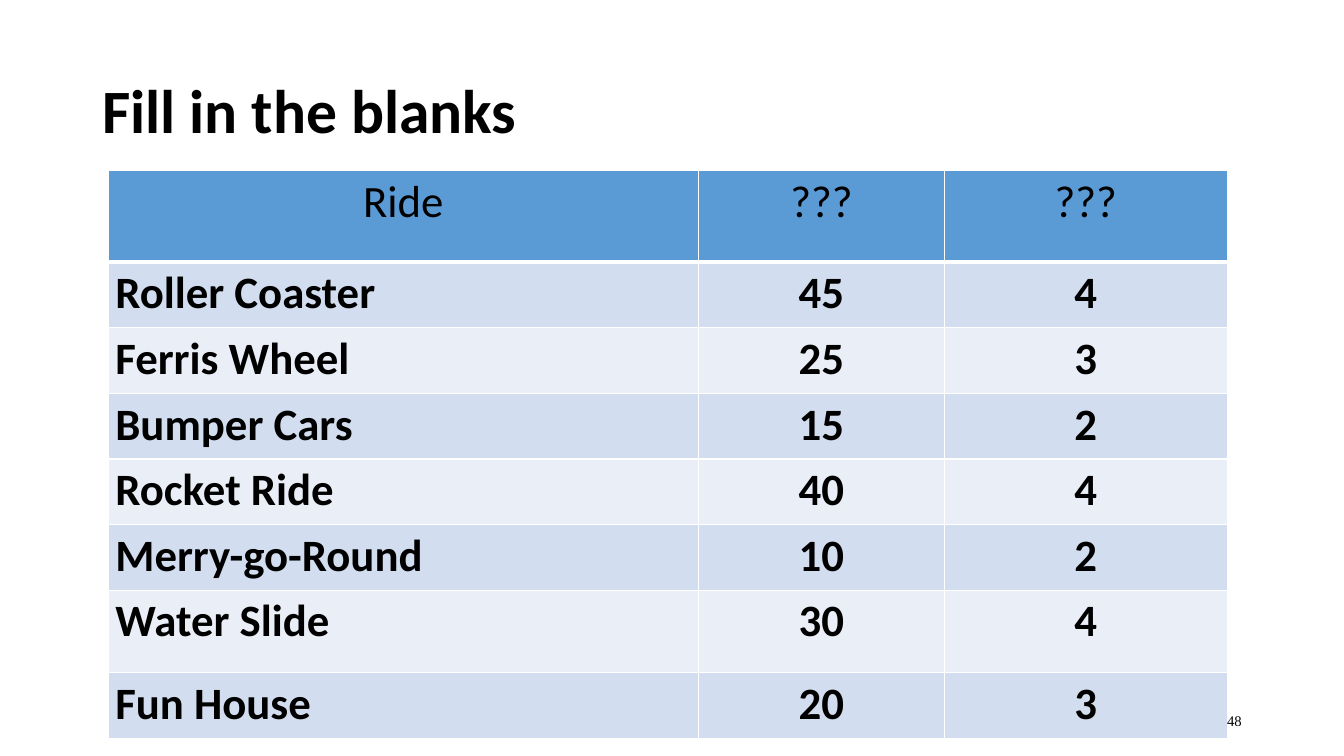
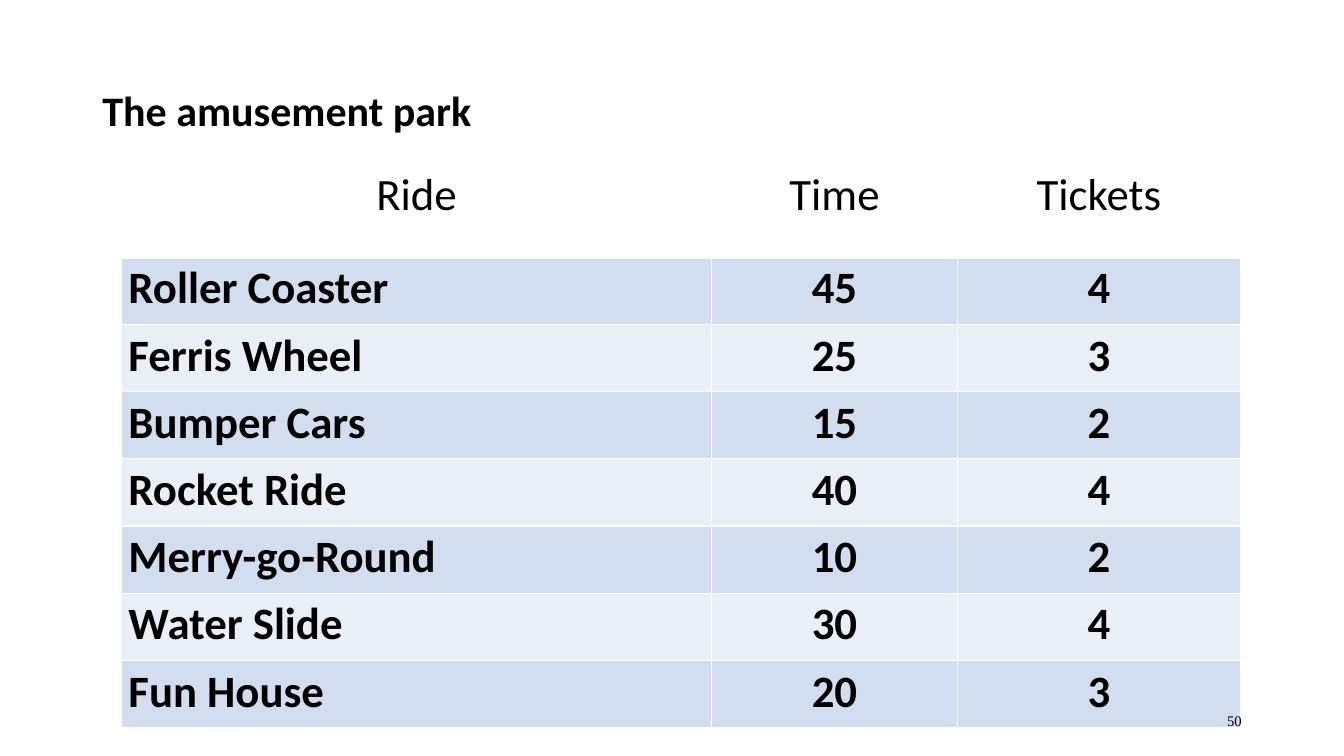
import pptx
import pptx.dml.color
import pptx.enum.text
import pptx.oxml
import pptx.oxml.ns
import pptx.util

Pt = pptx.util.Pt
RGBColor = pptx.dml.color.RGBColor
ALIGN = pptx.enum.text.PP_ALIGN
MIDDLE = pptx.enum.text.MSO_ANCHOR.MIDDLE

BLACK = RGBColor(0x00, 0x00, 0x00)
WHITE = RGBColor(0xFF, 0xFF, 0xFF)
HEADER_BLUE = RGBColor(0x5B, 0x9B, 0xD5)
BAND_COLORS = (RGBColor(0xD2, 0xDE, 0xEF), RGBColor(0xEA, 0xEF, 0xF7))

TITLE_BOX = (66, 28.8, 828, 104.4)
NUMBER_BOX = (678, 500.4, 216, 28.8)
COLUMN_WIDTHS = (421.5, 175.7, 202)

RIDES = (
    ("Roller Coaster", "45", "4"),
    ("Ferris Wheel", "25", "3"),
    ("Bumper Cars", "15", "2"),
    ("Rocket Ride", "40", "4"),
    ("Merry-go-Round", "10", "2"),
    ("Water Slide", "30", "4"),
    ("Fun House", "20", "3"),
)


def format_text(text_frame, size, font="Calibri", bold=False, align=ALIGN.LEFT):
    for paragraph in text_frame.paragraphs:
        paragraph.alignment = align
        for run in paragraph.runs:
            run.font.name = font
            run.font.size = Pt(size)
            run.font.bold = bold
            run.font.color.rgb = BLACK


def add_title(slide, box, text, size):
    title = slide.shapes.title
    title.left, title.top, title.width, title.height = map(Pt, box)
    text_frame = title.text_frame
    text_frame.text = text
    text_frame.auto_size = pptx.enum.text.MSO_AUTO_SIZE.NONE
    text_frame.vertical_anchor = MIDDLE
    text_frame.paragraphs[0].line_spacing = 0.9
    format_text(text_frame, size, bold=True)


def add_page_number(slide, box, number):
    text_frame = slide.shapes.add_textbox(*map(Pt, box)).text_frame
    text_frame.text = number
    text_frame.word_wrap = True
    text_frame.vertical_anchor = MIDDLE
    format_text(text_frame, 10.5, font="Times New Roman", align=ALIGN.RIGHT)


def set_borders(cell, bottom_width):
    properties = cell._tc.get_or_add_tcPr()
    widths = {"lnL": 1, "lnR": 1, "lnT": 1, "lnB": bottom_width}
    for index, (side, width) in enumerate(widths.items()):
        border = pptx.oxml.parse_xml(
            f'<a:{side} {pptx.oxml.ns.nsdecls("a")} w="{Pt(width)}">'
            f'<a:solidFill><a:srgbClr val="{WHITE}"/></a:solidFill></a:{side}>'
        )
        properties.insert(index, border)


def fill_cell(cell, text, color, is_header, align):
    cell.text = text
    cell.margin_left = cell.margin_right = Pt(5)
    cell.margin_top = cell.margin_bottom = Pt(2.9)
    cell.fill.solid()
    cell.fill.fore_color.rgb = color
    set_borders(cell, 3 if is_header else 1)
    format_text(cell.text_frame, 32, bold=not is_header, align=align)


def add_ride_table(slide, left, top, headings, header_color, row_heights):
    rows = (headings, *RIDES)
    table = slide.shapes.add_table(
        len(rows), len(COLUMN_WIDTHS), Pt(left), Pt(top),
        Pt(sum(COLUMN_WIDTHS)), Pt(sum(row_heights)),
    ).table
    for column, width in zip(table.columns, COLUMN_WIDTHS):
        column.width = Pt(width)
    for row_index, (texts, height) in enumerate(zip(rows, row_heights)):
        table.rows[row_index].height = Pt(height)
        is_header = row_index == 0
        color = header_color if is_header else BAND_COLORS[(row_index - 1) % 2]
        for column_index, text in enumerate(texts):
            align = ALIGN.CENTER if is_header or column_index else ALIGN.LEFT
            fill_cell(table.cell(row_index, column_index), text, color, is_header, align)


def add_ride_slide(presentation, title, title_size, number, **table_options):
    slide = presentation.slides.add_slide(presentation.slide_layouts[5])
    add_title(slide, TITLE_BOX, title, title_size)
    add_ride_table(slide, **table_options)
    add_page_number(slide, NUMBER_BOX, number)


def main():
    presentation = pptx.Presentation()
    presentation.slide_width = Pt(960)
    presentation.slide_height = Pt(540)
    add_ride_slide(
        presentation, "Fill in the blanks", 44, "48",
        left=77.4, top=121.7, headings=("Ride", "???", "???"),
        header_color=HEADER_BLUE, row_heights=(65.5, *[46.9] * 5, 59, 46.9),
    )
    add_ride_slide(
        presentation, "The amusement park", 30, "50",
        left=86.8, top=116.8, headings=("Ride", "Time", "Tickets"),
        header_color=WHITE, row_heights=(67, *[48] * 7),
    )
    presentation.save("out.pptx")


if __name__ == "__main__":
    main()
